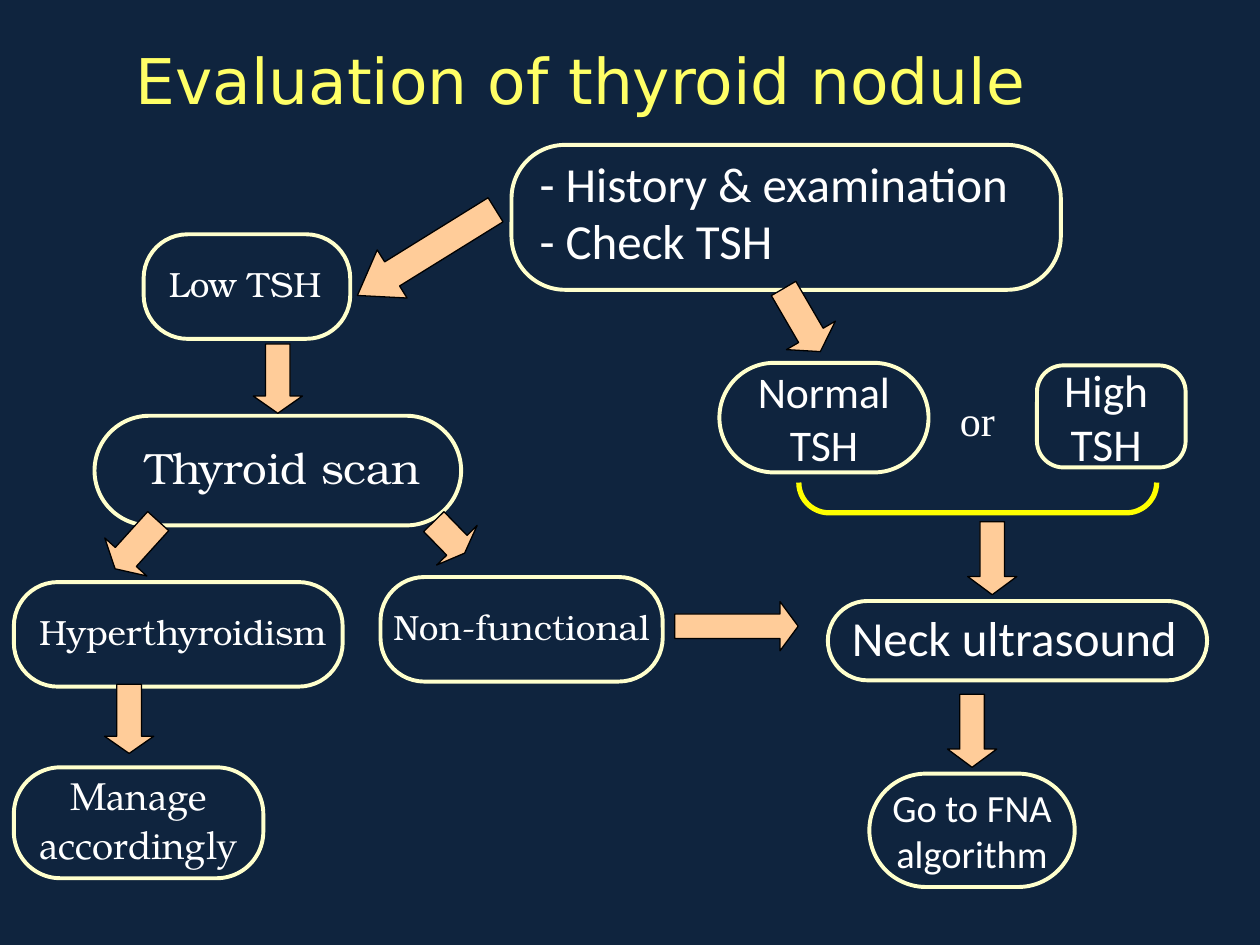
from dataclasses import dataclass

from pptx import Presentation
from pptx.dml.color import RGBColor
from pptx.enum.shapes import MSO_SHAPE as Preset
from pptx.enum.text import MSO_ANCHOR as Anchor, MSO_AUTO_SIZE as AutoSize, PP_ALIGN as Align
from pptx.util import Inches, Pt


@dataclass(frozen=True)
class Theme:
    background: str = "0F243E"
    title: str = "FFFF66"
    text: str = "FFFFFF"
    outline: str = "FFFFCC"
    arrow: str = "FFCC99"
    arrow_edge: str = "000000"
    bracket: str = "FFFF00"
    title_font: str = "DejaVu Sans"
    sans: str = "Calibri"
    bookman: str = "TeX Gyre Bonum"
    palatino: str = "TeX Gyre Pagella"
    serif: str = "Times New Roman"
    title_size: int = 36
    large: int = 28
    high: int = 26
    medium: int = 25
    joiner: int = 24
    final: int = 22
    small: int = 20


THEME = Theme()
COLUMNS, ROWS = 100, 75


def color(value):
    return RGBColor.from_string(value)


class Region:
    """A box on the slide grid; its parts are placed from its top left corner."""

    def __init__(self, slide, left, top, cell):
        self.shapes = slide.shapes
        self.left, self.top, self.cell = left, top, cell

    def frame(self, left, top, width, height):
        cell_width, cell_height = self.cell
        return (round((self.left + left) * cell_width), round((self.top + top) * cell_height),
                round(width * cell_width), round(height * cell_height))

    def add_preset(self, preset, box, adjustments, line, line_width, fill=None, rotation=0):
        shape = self.shapes.add_shape(preset, *self.frame(*box))
        shape.shadow.inherit = False
        shape.rotation = rotation
        for index, value in enumerate(adjustments):
            shape.adjustments[index] = value
        if fill:
            shape.fill.solid()
            shape.fill.fore_color.rgb = color(fill)
        else:
            shape.fill.background()
        shape.line.color.rgb = color(line)
        shape.line.width = Pt(line_width)
        return shape

    def add_step(self, box, lines, font, size, corner=0.42, align=Align.LEFT,
                 line_spacing=0.9, space_before=0.2):
        """Add a rounded box; space_before is a share of the type size."""
        step = self.add_preset(Preset.ROUNDED_RECTANGLE, box, [corner], THEME.outline, 2.25)
        text_frame = step.text_frame
        text_frame.word_wrap = False
        text_frame.vertical_anchor = Anchor.MIDDLE
        write(text_frame, lines, font, size, align=align,
              line_spacing=line_spacing, space_before=space_before)
        return step

    def add_arrow(self, box, head, rotation=0):
        self.add_preset(Preset.DOWN_ARROW, box, [0.5, head], THEME.arrow_edge, 0,
                        THEME.arrow, rotation)

    def add_label(self, box, text, font, size, ink=THEME.text):
        label = self.shapes.add_textbox(*self.frame(*box))
        label.text_frame.word_wrap = True
        label.text_frame.auto_size = AutoSize.SHAPE_TO_FIT_TEXT
        write(label.text_frame, [text], font, size, ink)


def write(text_frame, lines, font, size, ink=THEME.text, align=Align.LEFT,
          line_spacing=1.0, space_before=0.0):
    for index, line in enumerate(lines):
        paragraph = text_frame.add_paragraph() if index else text_frame.paragraphs[0]
        paragraph.alignment = align
        paragraph.line_spacing = line_spacing
        paragraph.space_before = Pt(size * space_before)
        run = paragraph.add_run()
        run.text = line
        run.font.name = font
        run.font.size = Pt(size)
        run.font.color.rgb = color(ink)


def add_title(region):
    region.add_label((0, 0, 89, 7), "Evaluation of thyroid nodule",
                     THEME.title_font, THEME.title_size, THEME.title)


def add_workup(region):
    region.add_step((12.6, 0, 43.6, 11.5), ["- History & examination", "- Check TSH"],
                    THEME.sans, THEME.large, corner=0.37, line_spacing=0.8)
    region.add_arrow((33.4, 11, 4.5, 5.8), 0.33, 329.8)
    region.add_arrow((3.6, 2.1, 4.5, 12.9), 0.72, 58.2)


def add_low_branch(region):
    region.add_step((10.4, 0, 16.4, 8.3), ["Low TSH"], THEME.bookman, THEME.small)
    scan = region.add_step((6.5, 14.4, 29.1, 8.7), ["Thyroid scan"], THEME.bookman,
                           THEME.medium, corner=0.5, align=Align.CENTER, space_before=0)
    scan.text_frame.margin_left = Inches(0.18)
    region.add_step((0.1, 27.6, 26.1, 8.3), ["Hyperthyroidism"], THEME.bookman, THEME.small)
    region.add_step((29.2, 27.2, 22.4, 8.3), ["Non-functional"], THEME.bookman, THEME.small,
                    align=Align.CENTER)
    region.add_step((0.1, 42.3, 19.8, 8.8), ["Manage", "accordingly"], THEME.palatino,
                    THEME.final, align=Align.CENTER)
    for left, top in ((19.1, 8.7), (7.3, 35.7)):
        region.add_arrow((left, top, 3.9, 5.5), 0.35)
    region.add_arrow((7.6, 22.1, 4.5, 5.1), 0.28, 42.1)
    region.add_arrow((32.4, 22.3, 4.5, 3.5), 0.25, 315.7)
    region.add_arrow((55.5, 26.2, 3.9, 9.8), 0.37, 270)


def add_normal_or_high_branch(region):
    centered = dict(align=Align.CENTER, line_spacing=1.0, space_before=0)
    region.add_step((1.1, 0, 16.6, 8.7), ["Normal", "TSH"], THEME.sans, THEME.medium,
                    corner=0.5, **centered)
    region.add_label((19.2, 2, 6.3, 5), "or", THEME.serif, THEME.joiner)
    high = region.add_step((26.3, 0.2, 11.8, 8.1), ["High", "TSH"], THEME.sans, THEME.high,
                           corner=0.26, **centered)
    high.text_frame.margin_right = Inches(0.18)
    region.add_preset(Preset.LEFT_BRACKET, (20.4, -3.5, 2.4, 28.4), [1],
                      THEME.bracket, 3, rotation=270)
    region.add_step((9.7, 18.9, 30.1, 6.3), ["Neck ultrasound"], THEME.sans, THEME.large,
                    corner=0.5)
    region.add_step((13, 32.6, 16.3, 9), ["Go to FNA", "algorithm"], THEME.sans, THEME.final,
                    corner=0.5, **centered)
    for left, top in ((20.8, 12.6), (19.2, 26.3)):
        region.add_arrow((left, top, 3.9, 5.8), 0.37)


def main():
    presentation = Presentation()
    presentation.slide_width, presentation.slide_height = Inches(10), Inches(7.5)
    cell = presentation.slide_width / COLUMNS, presentation.slide_height / ROWS
    slide = presentation.slides.add_slide(presentation.slide_layouts[6])
    slide.background.fill.solid()
    slide.background.fill.fore_color.rgb = color(THEME.background)

    add_title(Region(slide, 9.8, 2.8, cell))
    add_workup(Region(slide, 28, 11.5, cell))
    add_low_branch(Region(slide, 1, 18.6, cell))
    add_normal_or_high_branch(Region(slide, 56, 28.8, cell))
    presentation.save("out.pptx")


if __name__ == "__main__":
    main()
